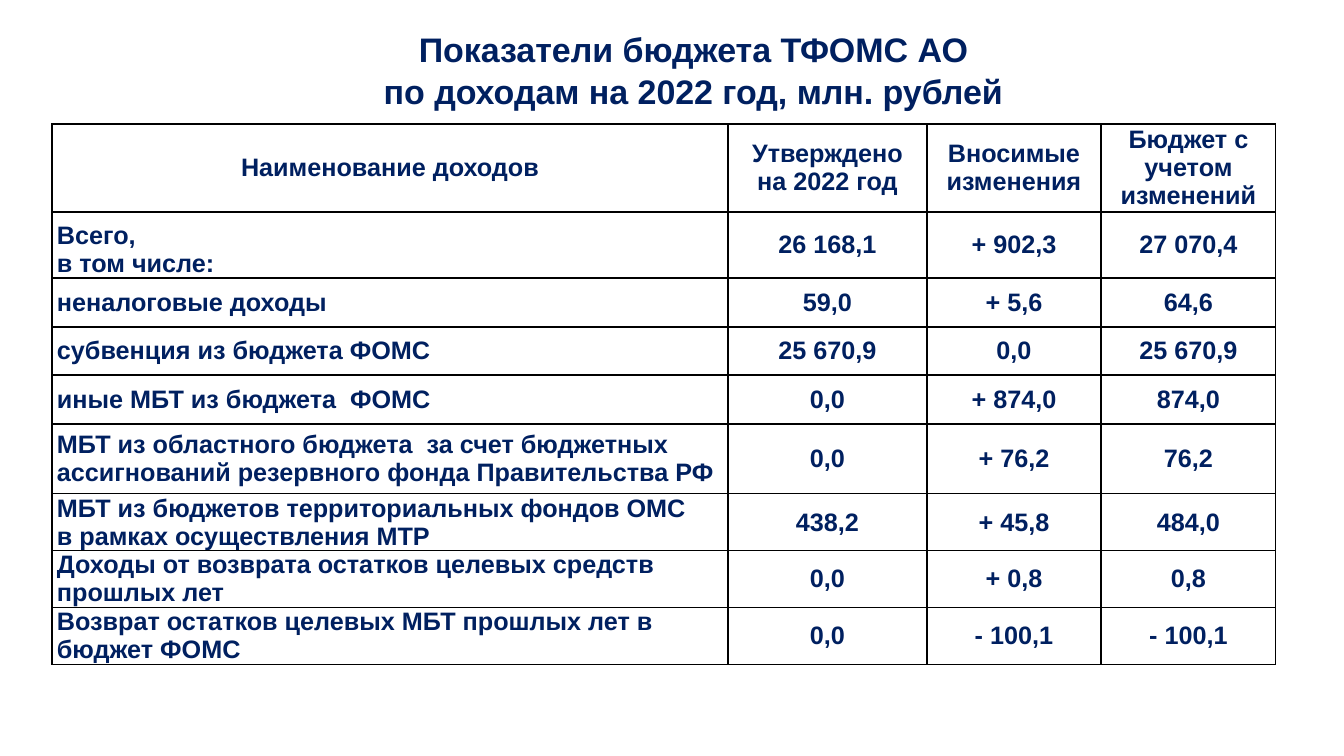
from pptx import Presentation
from pptx.dml.color import RGBColor
from pptx.enum.text import MSO_ANCHOR, MSO_AUTO_SIZE, PP_ALIGN
from pptx.oxml import parse_xml
from pptx.oxml.ns import nsdecls
from pptx.util import Pt

PX = 914400 / 100.8
NAVY = RGBColor(0x00, 0x20, 0x60)
BLACK = RGBColor(0x00, 0x00, 0x00)
FONT = "Arial"

TITLE = "Показатели бюджета ТФОМС АО\vпо доходам на 2022 год, млн. рублей"
HEADER = ("Наименование доходов", "Утверждено\nна 2022 год",
          "Вносимые изменения", "Бюджет с учетом изменений")
INCOME = [
    ("Всего,\nв том числе:", "26 168,1", "+ 902,3", "27 070,4"),
    ("неналоговые доходы", "59,0", "+ 5,6", "64,6"),
    ("субвенция из бюджета ФОМС", "25 670,9", "0,0", "25 670,9"),
    ("иные МБТ из бюджета  ФОМС", "0,0", "+ 874,0", "874,0"),
    ("МБТ из областного бюджета  за счет бюджетных ассигнований "
     "резервного фонда Правительства РФ", "0,0", "+ 76,2", "76,2"),
    ("МБТ из бюджетов территориальных фондов ОМС \vв рамках осуществления МТР",
     "438,2", "+ 45,8", "484,0"),
    ("Доходы от возврата остатков целевых средств прошлых лет",
     "0,0", "+ 0,8", "0,8"),
    ("Возврат остатков целевых МБТ прошлых лет в бюджет ФОМС",
     "0,0", "- 100,1", "- 100,1"),
]
ROWS = [HEADER] + INCOME
COL_W = (676, 199, 174, 175)
ROW_H = (88, 66, 49, 48, 49, 70, 57, 56, 57)
BOTTOM_ROWS = (1, 6, 7, 8)


def px(n):
    """Turn px into EMU."""
    return round(n * PX)


def write(tf, text, size, align, spacing=1.0):
    """Fill a text frame: a newline starts a paragraph, a vertical tab a line."""
    for i, part in enumerate(text.split("\n")):
        p = tf.paragraphs[0] if i == 0 else tf.add_paragraph()
        p.alignment = align
        p.line_spacing = spacing
        p.space_before = p.space_after = Pt(0)
        for j, line in enumerate(part.split("\v")):
            if j:
                p.add_line_break()
            r = p.add_run()
            r.text = line
            r.font.name, r.font.size, r.font.bold = FONT, Pt(size), True
            r.font.color.rgb = NAVY


def add_borders(cell):
    """Draw a thin black line on all four sides of a cell."""
    tc_pr = cell._tc.get_or_add_tcPr()
    for side in "LRTB":
        tc_pr.append(parse_xml(
            f'<a:ln{side} {nsdecls("a")} w="{Pt(1)}"><a:solidFill>'
            f'<a:srgbClr val="{BLACK}"/></a:solidFill></a:ln{side}>'))


def add_title(s):
    """Place the heading."""
    title = s.shapes.title
    title.left, title.top, title.width, title.height = map(px, (101, 21, 1185, 88))
    tf = title.text_frame
    tf.auto_size = MSO_AUTO_SIZE.NONE
    tf.word_wrap = True
    tf.vertical_anchor = MSO_ANCHOR.TOP
    write(tf, TITLE, 24.3, PP_ALIGN.CENTER, 1.05)


def add_income_table(s):
    """Build the table of income."""
    table = s.shapes.add_table(len(ROWS), len(COL_W), px(52), px(124),
                               px(sum(COL_W)), px(sum(ROW_H))).table
    table.first_row = table.horz_banding = False
    for col, w in zip(table.columns, COL_W):
        col.width = px(w)
    for i, (row, h) in enumerate(zip(ROWS, ROW_H)):
        table.rows[i].height = px(h)
        for j, text in enumerate(row):
            cell = table.cell(i, j)
            is_name = i > 0 and j == 0
            cell.margin_left = cell.margin_right = px(5)
            cell.margin_top = cell.margin_bottom = 0
            cell.vertical_anchor = (MSO_ANCHOR.BOTTOM if is_name and i in BOTTOM_ROWS
                                    else MSO_ANCHOR.MIDDLE)
            add_borders(cell)
            cell.fill.background()
            write(cell.text_frame, text, 18,
                  PP_ALIGN.LEFT if is_name else PP_ALIGN.CENTER)


def main():
    """Build and save the slide."""
    prs = Presentation()
    prs.slide_width, prs.slide_height = px(1344), px(756)
    s = prs.slides.add_slide(prs.slide_layouts[5])
    add_title(s)
    add_income_table(s)
    prs.save("out.pptx")


if __name__ == "__main__":
    main()
